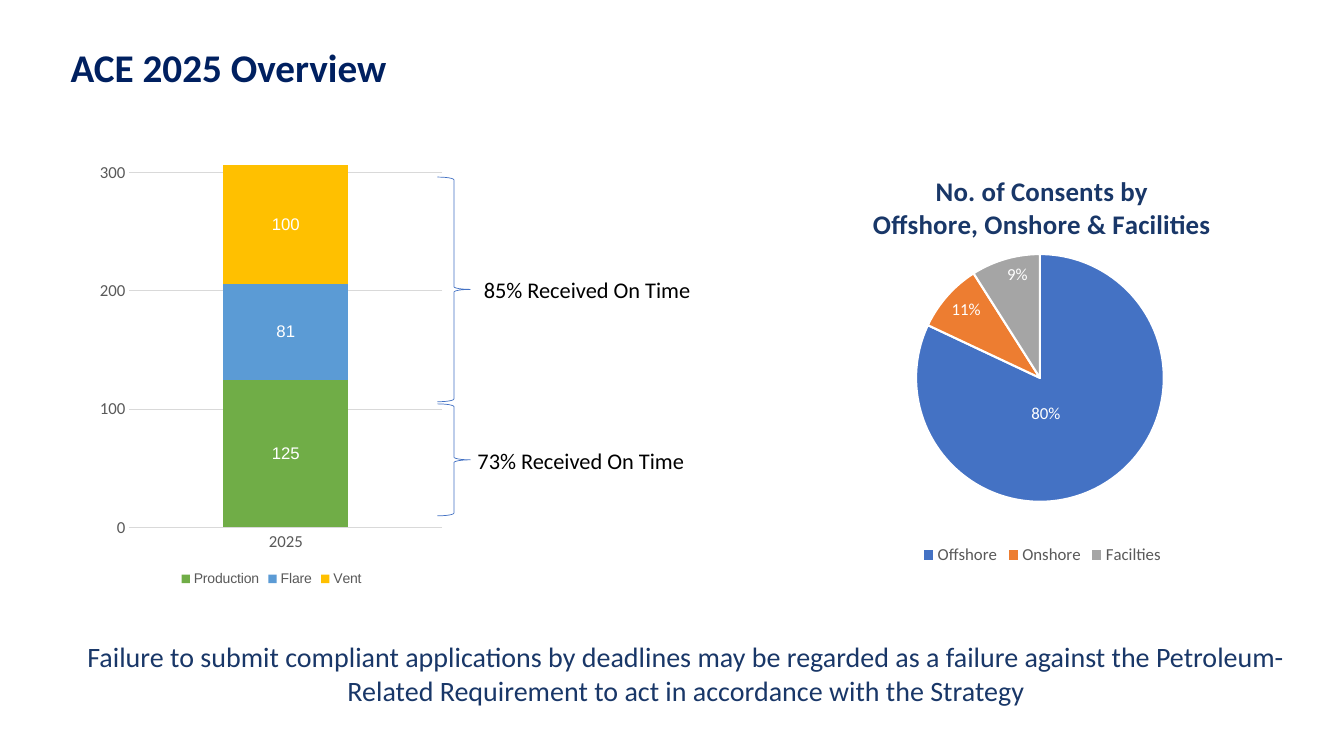
"""Build the ACE 2025 overview slide with its two charts."""
from lxml import etree
from pptx import Presentation
from pptx import util as u
from pptx.chart import data as chart_data
from pptx.dml.color import RGBColor
from pptx.enum import chart as ch
from pptx.enum import shapes, text
from pptx.oxml.ns import qn

TITLE_NAVY = RGBColor(0x00, 0x20, 0x60)
NAVY = RGBColor(0x19, 0x37, 0x68)
BLACK = RGBColor(0, 0, 0)
WHITE = RGBColor(0xFF, 0xFF, 0xFF)
GREY_TEXT = RGBColor(0x59, 0x59, 0x59)
GRID = RGBColor(0xD9, 0xD9, 0xD9)
BLUE = RGBColor(0x44, 0x72, 0xC4)
ORANGE = RGBColor(0xED, 0x7D, 0x31)
GREY = RGBColor(0xA5, 0xA5, 0xA5)
GREEN = RGBColor(0x70, 0xAD, 0x47)
SKY = RGBColor(0x5B, 0x9B, 0xD5)
YELLOW = RGBColor(0xFF, 0xC0, 0x00)

CONSENTS = [("Production", 125, GREEN), ("Flare", 81, SKY), ("Vent", 100, YELLOW)]
LOCATIONS = [("Offshore", 0.82, "80%", BLUE), ("Onshore", 0.09, "11%", ORANGE),
             ("Facilties", 0.09, "9%", GREY)]
WARNING = ("Failure to submit compliant applications by deadlines may be regarded as a failure "
           "against the Petroleum-Related Requirement to act in accordance with the Strategy")


def points(*lengths):
    return [u.Pt(length) for length in lengths]


def style(font, size, color, name="Calibri", bold=False):
    font.size, font.name, font.bold = u.Pt(size), name, bold
    font.color.rgb = color


def set_layout(parent, index, **places):
    """Give a chart part a manual layout, as fractions of the chart."""
    for old in parent.findall(qn("c:layout")):
        parent.remove(old)
    layout = etree.Element(qn("c:layout"))
    parent.insert(index, layout)
    manual = etree.SubElement(layout, qn("c:manualLayout"))
    for tag, value in places.items():
        etree.SubElement(manual, qn("c:" + tag)).set("val", str(value))


def add_chart(page, kind, place, values, legend_size, legend_font):
    chart = page.shapes.add_chart(kind, *points(*place), values).chart
    style(chart.font, 10, BLACK)
    chart.has_legend = True
    chart.legend.position = ch.XL_LEGEND_POSITION.BOTTOM
    chart.legend.include_in_layout = False
    style(chart.legend.font, legend_size, GREY_TEXT, legend_font)
    return chart


def set_plot_area(chart, x, y, w, h):
    area = chart.plots[0]._element.getparent()
    set_layout(area, 0, layoutTarget="inner", xMode="edge", yMode="edge", x=x, y=y, w=w, h=h)


def add_consent_columns(page):
    values = chart_data.CategoryChartData()
    values.categories = ["2025"]
    for name, count, _ in CONSENTS:
        values.add_series(name, [count])
    chart = add_chart(page, ch.XL_CHART_TYPE.COLUMN_STACKED, (67, 74, 254, 348), values, 10, "Arial")
    chart.has_title = False
    plot = chart.plots[0]
    plot.gap_width, plot.overlap, plot.vary_by_categories = 150, 100, False
    for series, (_, _, color) in zip(plot.series, CONSENTS):
        series.format.fill.solid()
        series.format.fill.fore_color.rgb = color
        labels = series.data_labels
        labels.show_value = True
        labels.position = ch.XL_LABEL_POSITION.CENTER
        style(labels.font, 12, WHITE, "Arial")
    for axis in (chart.category_axis, chart.value_axis):
        axis.major_tick_mark = axis.minor_tick_mark = ch.XL_TICK_MARK.NONE
        style(axis.tick_labels.font, 12, GREY_TEXT)
    scale = chart.value_axis
    scale.minimum_scale, scale.maximum_scale, scale.major_unit = 0, 350, 100
    scale.format.line.fill.background()
    for line in (chart.category_axis.format.line, scale.major_gridlines.format.line):
        line.color.rgb, line.width = GRID, u.Pt(0.75)
    set_plot_area(chart, 0.1, 0.02, 0.88, 0.85)


def add_location_pie(page):
    values = chart_data.CategoryChartData(number_format="0%")
    values.categories = [location[0] for location in LOCATIONS]
    values.add_series("Series 1", [location[1] for location in LOCATIONS])
    chart = add_chart(page, ch.XL_CHART_TYPE.PIE, (582.5, 106.5, 324, 300), values, 12, "Calibri")
    chart.has_title = True
    frame = chart.chart_title.text_frame
    frame.text = "No. of Consents by\nOffshore, Onshore & Facilities"
    for para in frame.paragraphs:
        style(para.runs[0].font, 19.2, NAVY, bold=True)
    set_layout(chart.chart_title._element, 1, xMode="edge", yMode="edge", x=0.12, y=0.05)
    plot = chart.plots[0]
    plot.vary_by_categories = True
    series = plot.series[0]
    labels = series.data_labels
    labels.show_value = True
    labels.position = ch.XL_LABEL_POSITION.INSIDE_END
    style(labels.font, 12, WHITE)
    for index, (_, _, caption, color) in enumerate(LOCATIONS):
        point = series.points[index]
        point.format.fill.solid()
        point.format.fill.fore_color.rgb = color
        point.format.line.color.rgb, point.format.line.width = WHITE, u.Pt(1.5)
        label = point.data_label
        label.text_frame.text = caption
        style(label.text_frame.paragraphs[0].runs[0].font, 12, WHITE)
        label.position = ch.XL_LABEL_POSITION.INSIDE_END
    series.points[0].data_label.position = ch.XL_LABEL_POSITION.CENTER
    set_layout(labels._element.find(qn("c:dLbl")), 1, x=-0.06, y=-0.04)
    set_plot_area(chart, 0.22, 0.25, 0.55, 0.59)


def add_brace(page, top, height):
    brace = page.shapes.add_shape(shapes.MSO_SHAPE.RIGHT_BRACE, *points(312.5, top, 23.5, height))
    brace.shadow.inherit = False
    brace.fill.background()
    brace.line.color.rgb, brace.line.width = BLUE, u.Pt(0.5)


def add_text(page, place, words, size, color, wrap=False):
    box = page.shapes.add_textbox(*points(*place))
    frame = box.text_frame
    frame.text = words
    frame.word_wrap = wrap
    frame.auto_size = text.MSO_AUTO_SIZE.SHAPE_TO_FIT_TEXT
    para = frame.paragraphs[0]
    style(para.runs[0].font, size, color)
    return para


def set_title(page, words):
    title = page.shapes.title
    title.left, title.top, title.width, title.height = points(50.5, 34.5, 559, 39.5)
    frame = title.text_frame
    frame.text = words
    frame.margin_left = frame.margin_top = 0
    frame.vertical_anchor = text.MSO_ANCHOR.TOP
    para = frame.paragraphs[0]
    para.alignment, para.line_spacing = text.PP_ALIGN.LEFT, 0.9
    style(para.runs[0].font, 28, TITLE_NAVY, bold=True)


def main():
    deck = Presentation()
    deck.slide_width, deck.slide_height = points(960, 540)
    page = deck.slides.add_slide(deck.slide_layouts[5])
    set_title(page, "ACE 2025 Overview")
    add_location_pie(page)
    add_consent_columns(page)
    add_brace(page, 126.5, 160.5)
    add_brace(page, 288.5, 80)
    add_text(page, (338.5, 193.5, 164, 26.5), "85% Received On Time", 16, BLACK)
    add_text(page, (334, 315.5, 164, 26.5), "73% Received On Time", 16, BLACK)
    warning = add_text(page, (18, 453.5, 929.5, 55.5), WARNING, 20, NAVY, wrap=True)
    warning.alignment, warning.space_after = text.PP_ALIGN.CENTER, u.Pt(6)
    warning._p.get_or_add_pPr().set("marL", str(u.Pt(14.4)))
    deck.save("out.pptx")


if __name__ == "__main__":
    main()
